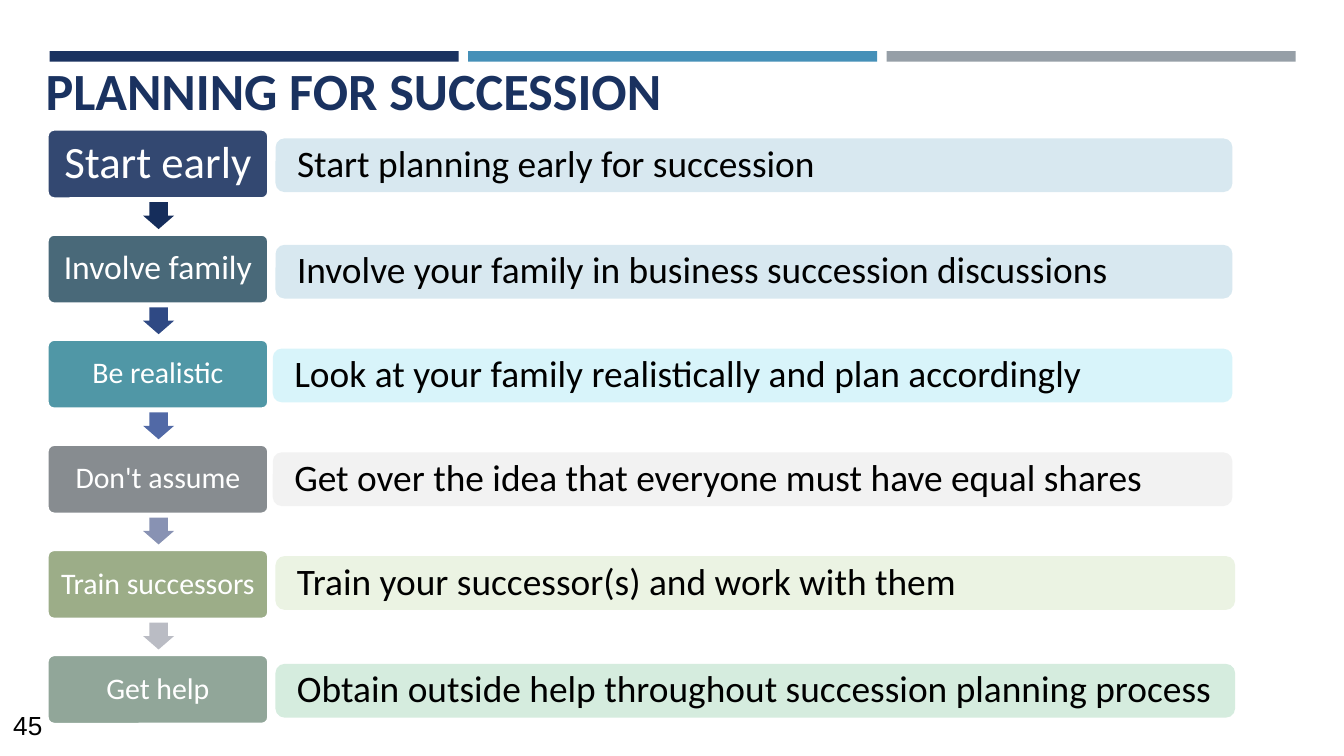
from lxml.etree import SubElement
from pptx import Presentation
from pptx.dml.color import RGBColor
from pptx.enum.shapes import MSO_SHAPE as Preset
from pptx.enum.text import MSO_ANCHOR as Anchor, MSO_AUTO_SIZE as AutoSize, PP_ALIGN as Align
from pptx.oxml.ns import qn
from pptx.util import Inches, Pt

WIDTH = 10
HEIGHT = WIDTH * 9 / 16
COLORS = {
    "navy": "1A3260", "blue": "4590B8", "gray": "969FA7",
    "white": "FFFFFF", "black": "000000",
}
# label, label size, box colour, box opacity in percent,
# detail, detail colour, detail left, top and width relative to the label box
STEPS = [
    ("Start early", 24, "1A3260", 89,
     "Start planning early for succession", "D8E8F0", (1.7, 0.07, 7.12)),
    ("Involve family", 18, "22485C", 82,
     "Involve your family in business succession discussions", "D8E8F0", (1.7, 0.08, 7.12)),
    ("Be realistic", 16, "107185", 73,
     "Look at your family realistically and plan accordingly", "D8F4FA", (1.68, 0.07, 7.14)),
    ("Don't assume", 16, "484F56", 65,
     "Get over the idea that everyone must have equal shares", "F2F2F2", (1.68, 0.06, 7.14)),
    ("Train successors", 16, "51702E", 57,
     "Train your successor(s) and work with them", "EBF3E3", (1.7, 0.05, 7.14)),
    ("Get help", 16, "204A2F", 49,
     "Obtain outside help throughout succession planning process", "D5ECDE", (1.7, 0.07, 7.14)),
]
ARROW_COLORS = ["152D5B", "2F4984", "5169A6", "8892B3", "BABCC4"]


def write(shape, text, size, color, inset, font="Calibri", bold=False,
          align=Align.LEFT, anchor=Anchor.MIDDLE, spacing=1.0):
    frame = shape.text_frame
    frame.text = text
    frame.word_wrap = True
    frame.auto_size = AutoSize.NONE
    frame.vertical_anchor = anchor
    frame.margin_left = frame.margin_right = Inches(inset[0])
    frame.margin_top = frame.margin_bottom = Inches(inset[1])
    paragraph = frame.paragraphs[0]
    paragraph.alignment = align
    paragraph.line_spacing = spacing
    run_font = paragraph.runs[0].font
    run_font.name, run_font.size, run_font.bold = font, Pt(size), bold
    run_font.color.rgb = RGBColor.from_string(color)


def add_filled(slide, preset, box, color, adjustments=()):
    shape = slide.shapes.add_shape(preset, *map(Inches, box))
    shape.shadow.inherit = False
    shape.fill.solid()
    shape.fill.fore_color.rgb = RGBColor.from_string(color)
    shape.line.fill.background()
    for index, value in enumerate(adjustments):
        shape.adjustments[index] = value
    return shape


def set_opacity(shape, percent):
    color = shape.fill._xPr.find(qn("a:solidFill"))[0]
    SubElement(color, qn("a:alpha")).set("val", str(percent * 1000))


def add_header_bars(slide, box):
    left, top, width, height = box
    gap = 0.07
    bar_width = (width - 2 * gap) / 3
    for index, name in enumerate(("navy", "blue", "gray")):
        bar_left = left + index * (bar_width + gap)
        add_filled(slide, Preset.RECTANGLE, (bar_left, top, bar_width, height), COLORS[name])


def place_title(slide, box):
    title = slide.shapes.title
    title.left, title.top, title.width, title.height = map(Inches, box)
    write(title, "PLANNING FOR SUCCESSION", 28, COLORS["navy"], (0.1, 0.1),
          bold=True, anchor=Anchor.TOP)


def add_step(slide, box, step):
    """Draw a label box and, to its right, the bar that explains it."""
    label, size, color, opacity, detail, detail_color, detail_place = step
    left, top, width, height = box
    detail_left, detail_top, detail_width = detail_place

    label_box = add_filled(slide, Preset.ROUNDED_RECTANGLE, box, color, [0.1])
    set_opacity(label_box, opacity)
    label_box.line.color.rgb = RGBColor.from_string(COLORS["white"])
    label_box.line.width = Pt(1.75)
    write(label_box, label, size, COLORS["white"], (0.07, 0.07),
          align=Align.CENTER, spacing=0.9)

    detail_bar = add_filled(
        slide, Preset.ROUNDED_RECTANGLE,
        (left + detail_left, top + detail_top, detail_width, 0.4),
        detail_color, [0.17])
    write(detail_bar, detail, 20, COLORS["black"], (0.14, 0.15), spacing=0.9)


def add_steps(slide, box):
    """Stack the steps in the box of the label column, with arrows between."""
    left, top, width, height = box
    step_height = 0.52
    pitch = (height - step_height) / (len(STEPS) - 1)
    for index, step in enumerate(STEPS):
        add_step(slide, (left, top + index * pitch, width, step_height), step)
    for index, color in enumerate(ARROW_COLORS):
        arrow_top = top + index * pitch + step_height + 0.01
        arrow = add_filled(slide, Preset.RIGHT_ARROW,
                           (left + 0.73, arrow_top, 0.2, 0.23), color, [0.6, 0.5])
        arrow.rotation = 90


def add_page_number(slide, box):
    number = slide.shapes.add_textbox(*map(Inches, box))
    write(number, "45", 14, COLORS["black"], (0.1, 0.05), font="Arial", anchor=Anchor.TOP)


def main():
    presentation = Presentation()
    presentation.slide_width, presentation.slide_height = Inches(WIDTH), Inches(HEIGHT)
    slide = presentation.slides.add_slide(presentation.slide_layouts[5])
    add_header_bars(slide, (0.37, 0.38, 9.27, 0.08))
    place_title(slide, (0.24, 0.33, 9.1, 0.63))
    add_steps(slide, (0.35, 0.96, 1.65, 4.43))
    add_page_number(slide, (0, 5.23, 0.48, 0.35))
    presentation.save("out.pptx")


if __name__ == "__main__":
    main()
